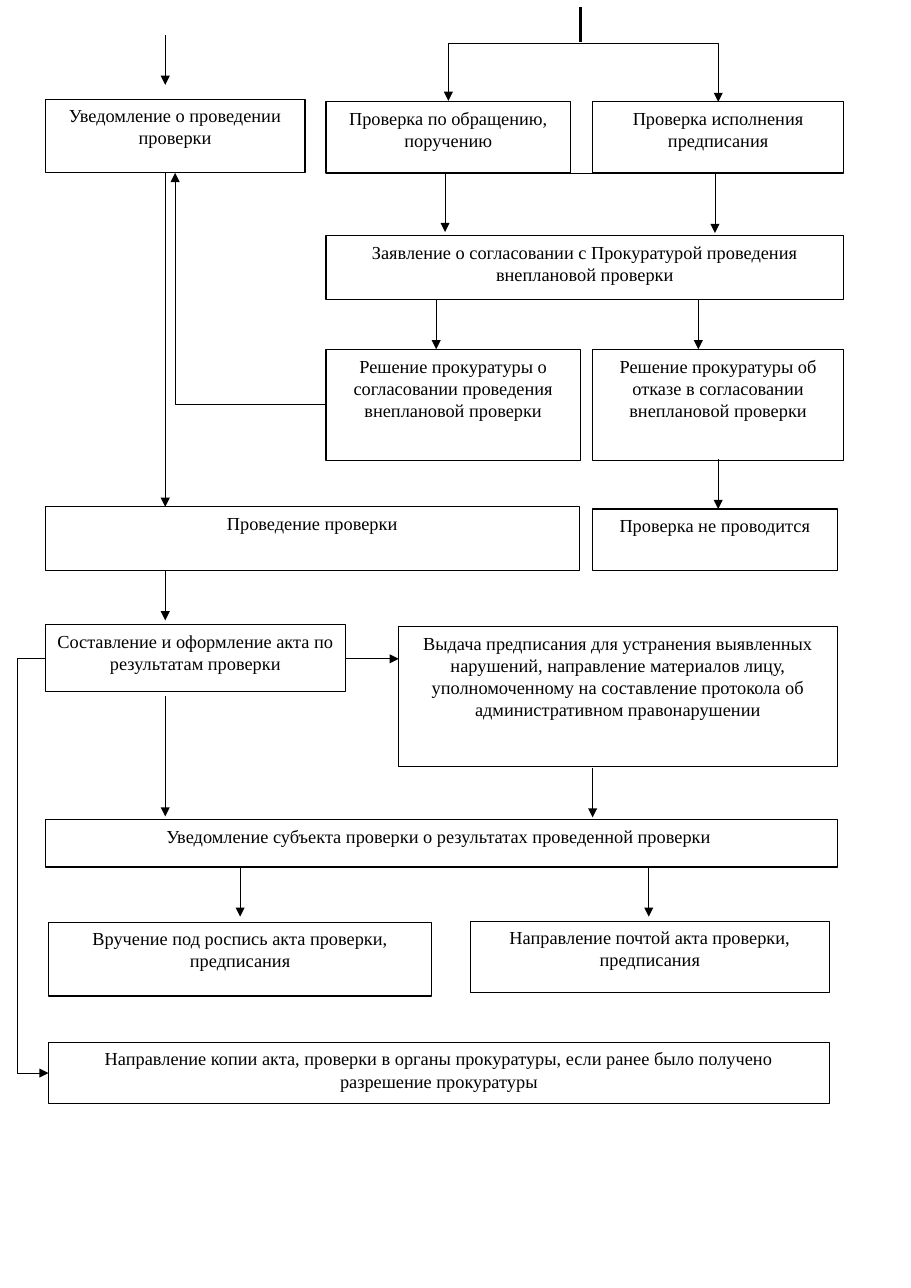
from pptx import Presentation
from pptx.dml.color import RGBColor
from pptx.enum.shapes import MSO_CONNECTOR, MSO_SHAPE
from pptx.enum.text import MSO_ANCHOR, PP_ALIGN
from pptx.oxml.ns import qn
from pptx.util import Inches, Pt
from lxml.etree import SubElement

BOXES = [
    (0.41, 0.9, 2.36, 0.67, "Уведомление о проведении проверки"),
    (5.38, 0.92, 2.28, 0.65, "Проверка исполнения предписания"),
    (2.96, 0.92, 2.22, 0.65, "Проверка по обращению, поручению"),
    (2.96, 2.14, 4.7, 0.58,
     "Заявление о согласовании с Прокуратурой проведения внеплановой проверки"),
    (2.96, 3.17, 2.31, 1.01,
     "Решение прокуратуры о согласовании проведения внеплановой проверки"),
    (5.38, 3.17, 2.28, 1.01,
     "Решение прокуратуры об отказе в согласовании внеплановой проверки"),
    (5.38, 4.62, 2.22, 0.56, "Проверка не проводится"),
    (0.41, 4.6, 4.85, 0.58, "Проведение проверки"),
    (0.41, 5.67, 2.73, 0.61, "Составление и оформление акта по результатам проверки"),
    (3.62, 5.69, 3.98, 1.27,
     "Выдача предписания для устранения выявленных нарушений, направление материалов "
     "лицу, уполномоченному на составление протокола об административном правонарушении"),
    (0.41, 7.44, 7.19, 0.43,
     "Уведомление субъекта проверки о результатах проведенной проверки "),
    (0.44, 8.37, 3.48, 0.67, "Вручение под роспись акта проверки, предписания"),
    (4.27, 8.36, 3.26, 0.65, "Направление почтой акта проверки, предписания"),
    (0.44, 9.46, 7.09, 0.56,
     "Направление копии акта, проверки в органы прокуратуры, если ранее было "
     "получено разрешение прокуратуры"),
]

# x, top, bottom
DOWN_ARROWS = [
    (1.5, 0.32, 0.77), (1.5, 1.57, 4.6), (1.5, 5.18, 5.63), (1.5, 6.32, 7.41),
    (3.96, 2.72, 3.17), (6.34, 2.72, 3.17), (6.52, 4.17, 4.62),
    (5.38, 6.97, 7.42), (2.18, 7.87, 8.32), (5.89, 7.87, 8.32),
]


def color(hex_string):
    return RGBColor.from_string(hex_string)


class Flowchart:
    font_name = "Times New Roman"
    font_size = Pt(12)
    ink = "000000"
    paper = "FFFFFF"

    def __init__(self, slide):
        self.slide = slide

    def box(self, left, top, width, height, text):
        shape = self.slide.shapes.add_shape(
            MSO_SHAPE.RECTANGLE, Inches(left), Inches(top), Inches(width), Inches(height))
        shape.shadow.inherit = False
        shape.fill.solid()
        shape.fill.fore_color.rgb = color(self.paper)
        shape.line.color.rgb = color(self.ink)
        shape.line.width = Pt(0.75)
        frame = shape.text_frame
        frame.word_wrap = True
        frame.vertical_anchor = MSO_ANCHOR.TOP
        frame.text = text
        paragraph = frame.paragraphs[0]
        paragraph.alignment = PP_ALIGN.CENTER
        paragraph.space_after = Pt(8)
        font = paragraph.runs[0].font
        font.name = self.font_name
        font.size = self.font_size
        font.color.rgb = color(self.ink)

    def line(self, start, end, width=0.75, ends=("tailEnd",), kind=MSO_CONNECTOR.STRAIGHT):
        """Draw a connector; ends lists headEnd and tailEnd arrows in that order."""
        connector = self.slide.shapes.add_connector(
            kind, *(Inches(value) for value in (*start, *end)))
        connector.line.color.rgb = color(self.ink)
        connector.line.width = Pt(width)
        properties = connector._element.spPr
        for name in ends:
            SubElement(properties.find(qn("a:ln")), qn(f"a:{name}"), type="triangle")
        SubElement(properties, qn("a:effectLst"))
        return connector

    def elbow(self, start, end, bend=None, ends=("tailEnd",), **transform):
        """Draw an elbow; bend is the turn as a share of the width, None for one corner."""
        connector = self.line(start, end, 0.5, ends, MSO_CONNECTOR.ELBOW)
        properties = connector._element.spPr
        for name, value in transform.items():
            properties.find(qn("a:xfrm")).set(name, value)
        geometry = properties.find(qn("a:prstGeom"))
        if bend is None:
            geometry.set("prst", "bentConnector2")
        else:
            SubElement(geometry.find(qn("a:avLst")), qn("a:gd"),
                       name="adj1", fmla=f"val {round(bend * 100000)}")

    def bracket(self, left, right, bottom, rise):
        """Join two downward arrows by a bar that lies rise above their tips."""
        center, half_span, half_depth = (left + right) / 2, (right - left) / 2, 0.005
        self.elbow((center - half_depth, bottom - half_span),
                   (center + half_depth, bottom + half_span),
                   -rise / (2 * half_depth), ("headEnd", "tailEnd"),
                   rot="16200000", flipH="1")


def main():
    presentation = Presentation()
    presentation.slide_width = Inches(8.27)
    presentation.slide_height = Inches(11.69)
    chart = Flowchart(presentation.slides.add_slide(presentation.slide_layouts[6]))

    for box in BOXES:
        chart.box(*box)
    for x, top, bottom in DOWN_ARROWS:
        chart.line((x, top), (x, bottom))
    chart.line((3.14, 5.98), (3.62, 5.98))
    chart.line((5.27, 0.38), (5.27, 0.06), width=2, ends=())

    chart.bracket(4.07, 6.52, 0.92, 0.53)
    chart.bracket(4.04, 6.49, 2.11, 0.54)
    chart.elbow((1.59, 1.57), (2.96, 3.67), rot="10800000")
    chart.elbow((0.41, 5.98), (0.44, 9.74), bend=-0.25 / 0.03)

    presentation.save("out.pptx")


if __name__ == "__main__":
    main()
